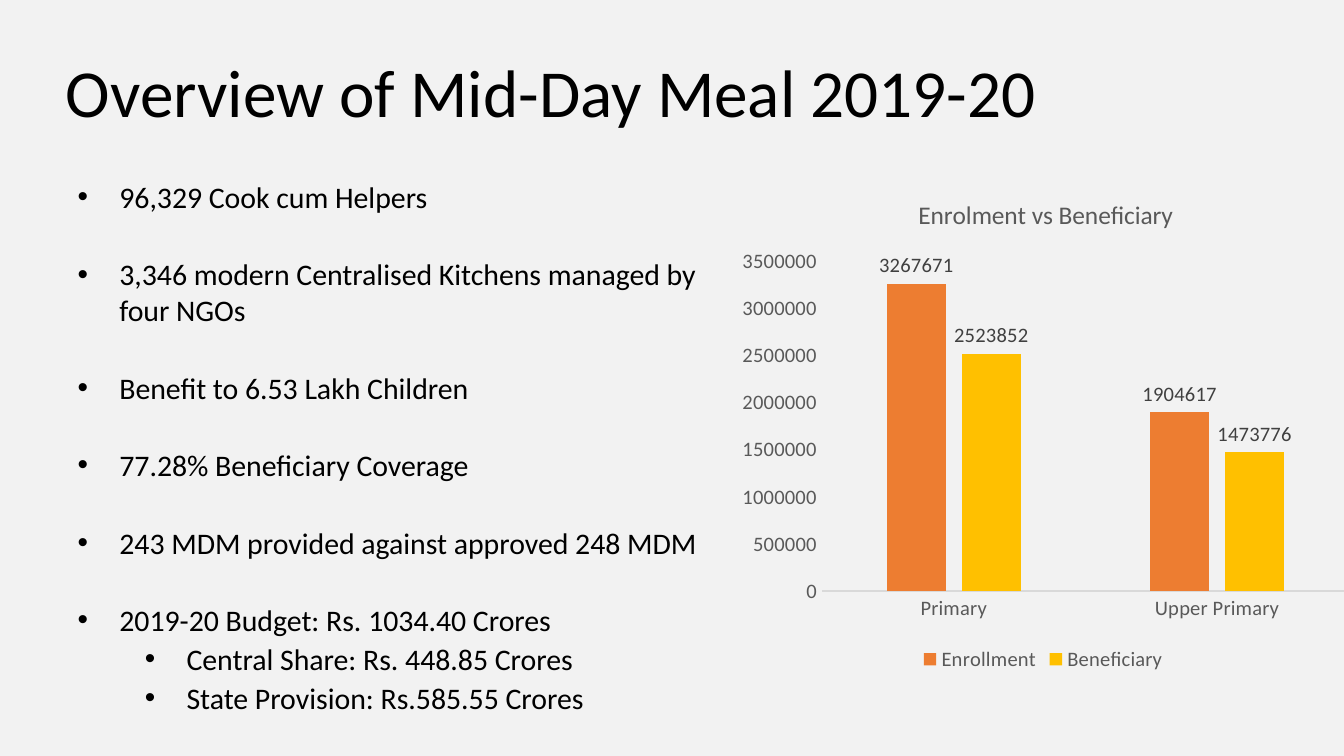
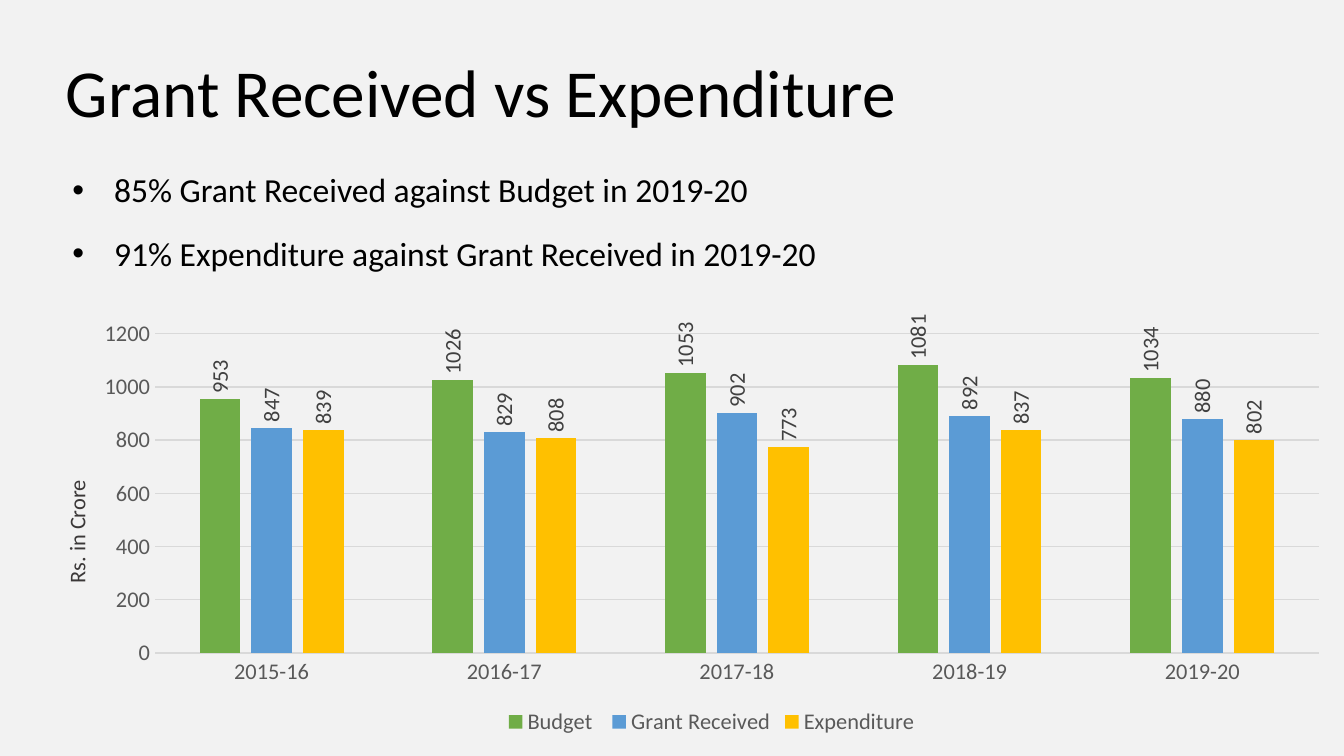
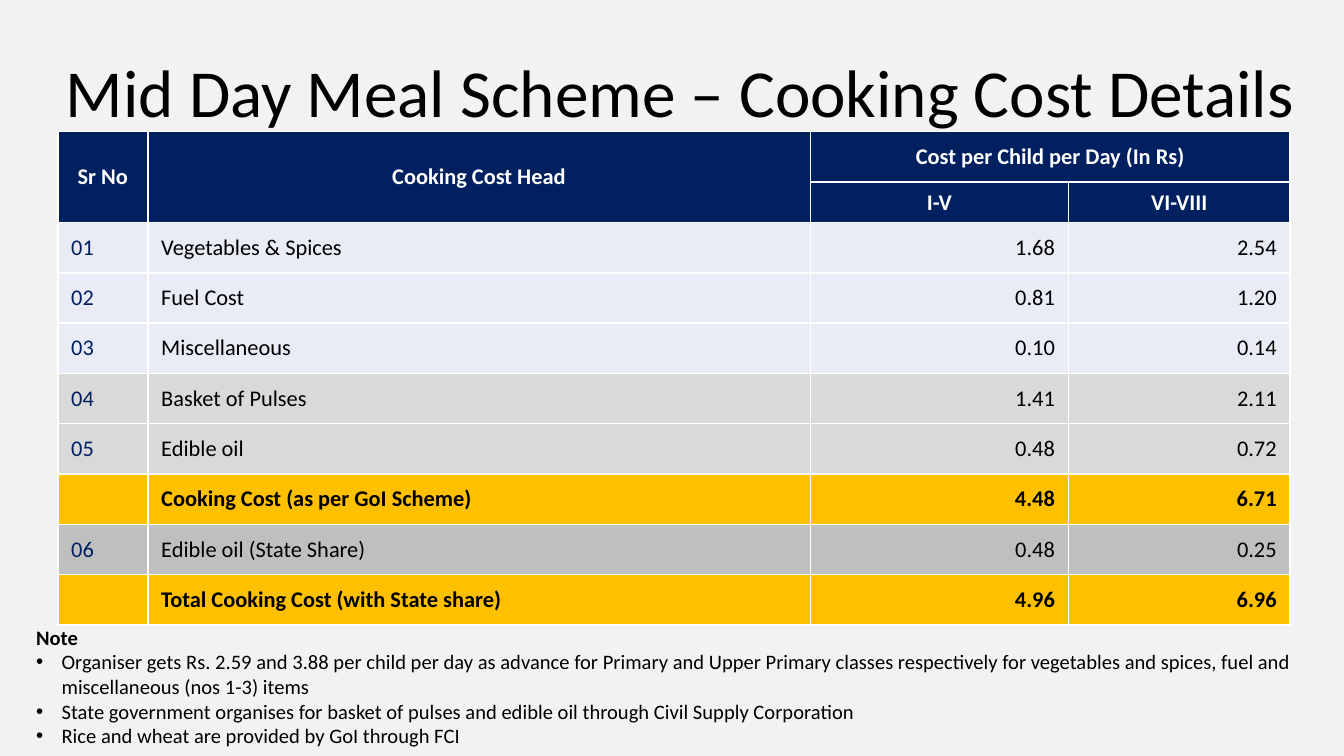
from lxml.etree import SubElement
from pptx import Presentation
from pptx.chart.data import CategoryChartData
from pptx.dml.color import RGBColor
from pptx.enum.chart import XL_CHART_TYPE, XL_LABEL_POSITION, XL_LEGEND_POSITION, XL_TICK_MARK
from pptx.enum.text import MSO_ANCHOR, MSO_AUTO_SIZE, PP_ALIGN
from pptx.oxml.ns import qn
from pptx.util import Inches, Pt

COLOURS = {
    "background": "F2F2F2", "black": "000000", "white": "FFFFFF", "navy": "002060",
    "orange": "ED7D31", "gold": "FFC000", "green": "70AD47", "blue": "5B9BD5",
    "axis": "595959", "label": "404040", "caption": "3B3838", "rule": "D9D9D9",
    "lavender": "E9EBF5", "silver": "D9D9D9", "grey": "BFBFBF",
}
FONT = "Calibri"


def colour(name):
    return RGBColor.from_string(COLOURS[name])


class Deck:
    def __init__(self):
        self.presentation = Presentation()
        self.presentation.slide_width = Inches(10)
        self.presentation.slide_height = Inches(10 * 9 / 16)
        self.slide = None

    def style(self, font, size, name="black", bold=False):
        font.name = FONT
        font.size = Pt(size)
        font.bold = bold
        font.color.rgb = colour(name)

    def run(self, paragraph, text, size, name="black", bold=False):
        run = paragraph.add_run()
        run.text = text
        self.style(run.font, size, name, bold)

    def text_box(self, left, top, width, height):
        shape = self.slide.shapes.add_textbox(
            Inches(left), Inches(top), Inches(width), Inches(height))
        shape.text_frame.word_wrap = True
        shape.text_frame.auto_size = MSO_AUTO_SIZE.SHAPE_TO_FIT_TEXT
        return shape

    def new_slide(self, title, title_width=8.08):
        self.slide = self.presentation.slides.add_slide(self.presentation.slide_layouts[6])
        self.slide.background.fill.solid()
        self.slide.background.fill.fore_color.rgb = colour("background")
        frame = self.text_box(0.42, 0.24, title_width, 0.78).text_frame
        frame.auto_size = MSO_AUTO_SIZE.NONE
        frame.vertical_anchor = MSO_ANCHOR.BOTTOM
        frame.margin_left = frame.margin_right = Inches(0.07)
        frame.margin_top = frame.margin_bottom = Inches(0.04)
        frame.paragraphs[0].line_spacing = 0.9
        self.run(frame.paragraphs[0], title, 36)

    def bullet(self, paragraph, text, size, indent=0.31, level=0, before=0, spacing=None):
        paragraph.level = level
        paragraph.space_before = Pt(before)
        paragraph.line_spacing = spacing
        properties = paragraph._p.get_or_add_pPr()
        properties.set("marL", str(Inches(indent + level * 0.5)))
        properties.set("indent", str(-Inches(indent)))
        SubElement(properties, qn("a:buFont"), typeface="Arial")
        SubElement(properties, qn("a:buChar"), char="•")
        self.run(paragraph, text, size)

    def caption(self, text, left, top, width, height, rotation):
        shape = self.text_box(left, top, width, height)
        shape.rotation = rotation
        self.run(shape.text_frame.paragraphs[0], text, 12, "caption")

    def column_chart(self, box, categories, series, size, maximum, step,
                     title=None, grid=False, vertical_labels=False, number_format="General"):
        data = CategoryChartData(number_format=number_format)
        data.categories = categories
        for name, values, _ in series:
            data.add_series(name, values)
        chart = self.slide.shapes.add_chart(
            XL_CHART_TYPE.COLUMN_CLUSTERED, *map(Inches, box), data).chart
        self.style(chart.font, size)
        chart.has_title = title is not None
        if title:
            self.run(chart.chart_title.text_frame.paragraphs[0], title, 13.6, "axis")
            chart.chart_title.include_in_layout = False
        chart.has_legend = True
        chart.legend.position = XL_LEGEND_POSITION.BOTTOM
        chart.legend.include_in_layout = False
        self.style(chart.legend.font, size, "axis")

        for axis in (chart.category_axis, chart.value_axis):
            axis.major_tick_mark = axis.minor_tick_mark = XL_TICK_MARK.NONE
            self.style(axis.tick_labels.font, size, "axis")
        lines = [chart.category_axis.format.line]
        value_axis = chart.value_axis
        value_axis.format.line.fill.background()
        value_axis.minimum_scale, value_axis.maximum_scale = 0, maximum
        value_axis.major_unit = step
        value_axis.tick_labels.number_format = number_format
        value_axis.tick_labels.number_format_is_linked = False
        value_axis.has_major_gridlines = grid
        if grid:
            lines.append(value_axis.major_gridlines.format.line)
        for line in lines:
            line.color.rgb = colour("rule")
            line.width = Pt(0.75)

        plot = chart.plots[0]
        plot.gap_width, plot.overlap = 219, -27
        plot.vary_by_categories = False
        for column, (_, _, fill) in zip(plot.series, series):
            column.invert_if_negative = False
            column.format.fill.solid()
            column.format.fill.fore_color.rgb = colour(fill)
            labels = column.data_labels
            labels.show_value = True
            labels.position = XL_LABEL_POSITION.OUTSIDE_END
            labels.number_format = number_format
            labels.number_format_is_linked = False
            self.style(labels.font, size, "label")
            if vertical_labels:
                body = labels._element.find(".//" + qn("a:bodyPr"))
                body.set("rot", "-5400000")
                body.set("vert", "horz")

    def cell(self, cell, text, fill, name="black", bold=False, alignment=PP_ALIGN.LEFT):
        properties = cell._tc.get_or_add_tcPr()
        for side in ("L", "R", "T", "B"):
            border = SubElement(properties, qn(f"a:ln{side}"), w=str(Pt(1)))
            solid = SubElement(border, qn("a:solidFill"))
            SubElement(solid, qn("a:srgbClr"), val=COLOURS["white"])
        cell.fill.solid()
        cell.fill.fore_color.rgb = colour(fill)
        cell.vertical_anchor = MSO_ANCHOR.MIDDLE
        paragraph = cell.text_frame.paragraphs[0]
        paragraph.alignment = alignment
        if text:
            self.run(paragraph, text, 12, name, bold)
        else:
            paragraph._p.get_or_add_endParaRPr().set("sz", "1200")

    def table(self, left, top, widths, heights, headers, rows):
        table = self.slide.shapes.add_table(
            len(heights), len(widths), Inches(left), Inches(top),
            Inches(sum(widths)), Inches(sum(heights))).table
        table.first_row = table.horz_banding = False
        for column, width in zip(table.columns, widths):
            column.width = Inches(width)
        for row, height in zip(table.rows, heights):
            row.height = Inches(height)
        for row, texts in enumerate(headers):
            for column, text in enumerate(texts):
                self.cell(table.cell(row, column), text, "navy", "white", True, PP_ALIGN.CENTER)
        for row, (fill, *texts) in enumerate(rows, len(headers)):
            for column, text in enumerate(texts):
                self.cell(table.cell(row, column), text, fill,
                          "black" if column else "navy", fill == "gold",
                          PP_ALIGN.RIGHT if column > 1 else PP_ALIGN.LEFT)
        return table


def build_overview(deck):
    deck.new_slide("Overview of Mid-Day Meal 2019-20")
    frame = deck.text_box(0.48, 1.28, 4.95, 4.19).text_frame
    points = [
        ("96,329 Cook cum Helpers", 0),
        ("3,346 modern Centralised Kitchens managed by four NGOs", 0),
        ("Benefit to 6.53 Lakh Children", 0),
        ("77.28% Beneficiary Coverage", 0),
        ("243 MDM provided against approved 248 MDM", 0),
        ("2019-20 Budget: Rs. 1034.40 Crores", 0),
        ("Central Share: Rs. 448.85 Crores", 1),
        ("State Provision: Rs.585.55 Crores", 1),
    ]
    for index, (text, level) in enumerate(points):
        paragraph = frame.add_paragraph() if index else frame.paragraphs[0]
        before = 22.3 if index and not level else 1.6
        deck.bullet(paragraph, text, 16, level=level, before=before)
        if index >= 5:
            paragraph.alignment = PP_ALIGN.JUSTIFY
    deck.column_chart(
        (5.43, 1.31, 4.7, 3.73), ["Primary", "Upper Primary"],
        [("Enrollment", (3267671, 1904617), "orange"),
         ("Beneficiary ", (2523852, 1473776), "gold")],
        11, 3500000, 500000, title="Enrolment vs Beneficiary")


def build_grants(deck):
    deck.new_slide("Grant Received vs Expenditure")
    deck.column_chart(
        (0.59, 2.32, 9.41, 3.19), ["2015-16", "2016-17", "2017-18", "2018-19", "2019-20"],
        [("Budget ", (953, 1026, 1053, 1081, 1034), "green"),
         ("Grant Received", (847, 829, 902, 892, 880), "blue"),
         ("Expenditure", (839, 808, 773, 837, 802), "gold")],
        12, 1200, 200, grid=True, vertical_labels=True, number_format="0")
    deck.caption("Rs. in Crore", -0.17, 3.55, 1.48, 0.3, 270)
    frame = deck.text_box(0.44, 1.06, 7.19, 0.99).text_frame
    points = ["85% Grant Received against Budget in 2019-20",
              "91% Expenditure against Grant Received in 2019-20"]
    for index, text in enumerate(points):
        paragraph = frame.add_paragraph() if index else frame.paragraphs[0]
        deck.bullet(paragraph, text, 18, before=1.8, spacing=1.5)


def build_cooking_cost(deck):
    deck.new_slide("Mid Day Meal Scheme – Cooking Cost Details", 9.42)
    headers = [("Sr No", "Cooking Cost Head", "Cost per Child per Day (In Rs)", ""),
               ("", "", "I-V", "VI-VIII")]
    rows = [
        ("lavender", "01", "Vegetables & Spices", "1.68", "2.54"),
        ("lavender", "02", "Fuel Cost", "0.81", "1.20"),
        ("lavender", "03", "Miscellaneous", "0.10", "0.14"),
        ("silver", "04", "Basket of Pulses", "1.41", "2.11"),
        ("silver", "05", "Edible oil", "0.48", "0.72"),
        ("gold", "", "Cooking Cost (as per GoI Scheme)", "4.48", "6.71"),
        ("grey", "06", "Edible oil (State Share)", "0.48", "0.25"),
        ("gold", "", "Total Cooking Cost (with State share)", "4.96", "6.96"),
    ]
    subheader_height = 0.3
    row_height = (3.67 - subheader_height) / (len(rows) + 1)
    heights = [row_height, subheader_height] + [row_height] * len(rows)
    table = deck.table(0.43, 0.98, (0.67, 4.93, 1.92, 1.65), heights, headers, rows)
    for column in (0, 1):
        table.cell(0, column).merge(table.cell(1, column))
    table.cell(0, 2).merge(table.cell(0, 3))

    frame = deck.text_box(0.17, 4.6, 9.67, 1.03).text_frame
    deck.run(frame.paragraphs[0], "Note", 11, bold=True)
    notes = [
        "Organiser gets Rs. 2.59 and 3.88 per child per day as advance for Primary and Upper "
        "Primary classes respectively for vegetables and spices, fuel and miscellaneous "
        "(nos 1-3) items",
        "State government organises for basket of pulses and edible oil through Civil Supply "
        "Corporation",
        "Rice and wheat are provided by GoI through FCI",
    ]
    for text in notes:
        deck.bullet(frame.add_paragraph(), text, 11, indent=0.19)


def main():
    deck = Deck()
    build_overview(deck)
    build_grants(deck)
    build_cooking_cost(deck)
    deck.presentation.save("out.pptx")


if __name__ == "__main__":
    main()
